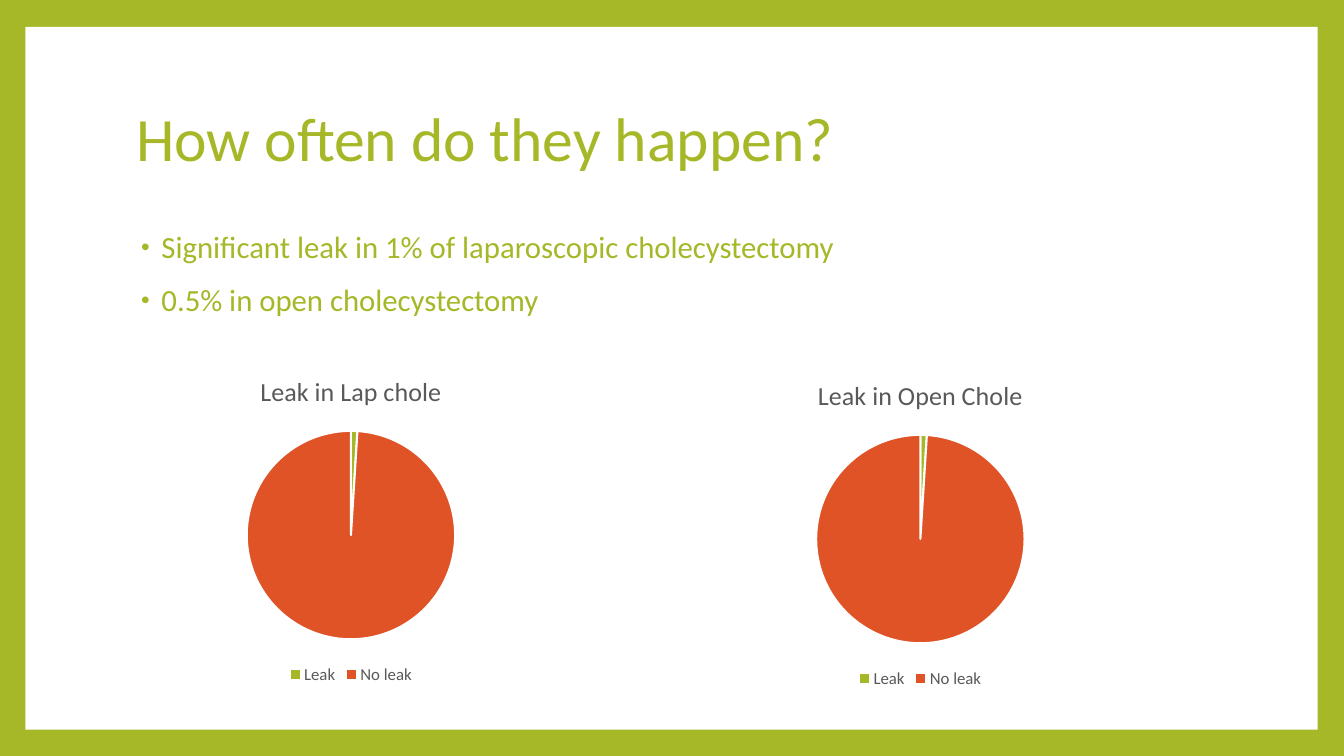
import pptx
import pptx.chart.data
import pptx.dml.color
import pptx.enum.chart
import pptx.enum.shapes
import pptx.enum.text
import pptx.util
from lxml import etree
from pptx.oxml.ns import qn

Cm = pptx.util.Cm
Pt = pptx.util.Pt
RGBColor = pptx.dml.color.RGBColor

GREEN = RGBColor(0xA6, 0xB7, 0x27)
ORANGE = RGBColor(0xDF, 0x53, 0x27)
GREY = RGBColor(0x59, 0x59, 0x59)
WHITE = RGBColor(0xFF, 0xFF, 0xFF)
FACE = "Calibri"


def set_font(font, size, color):
    """Set face, size and colour of a font."""
    font.name = FACE
    font.size = Pt(size)
    font.bold = False
    font.color.rgb = color


def add_panel(slide):
    """Draw the white panel inside the green frame."""
    panel = slide.shapes.add_shape(
        pptx.enum.shapes.MSO_SHAPE.RECTANGLE, Cm(0.64), Cm(0.68), Cm(32.57), Cm(17.71))
    panel.shadow.inherit = False
    panel.fill.solid()
    panel.fill.fore_color.rgb = WHITE
    panel.line.fill.background()


def add_bullet(para):
    """Give a paragraph a small green bullet and a hanging indent."""
    props = para._p.get_or_add_pPr()
    props.set("marL", str(Cm(0.64)))
    props.set("indent", str(-Cm(0.51)))
    color = etree.SubElement(props, qn("a:buClr"))
    etree.SubElement(color, qn("a:srgbClr"), val=str(GREEN))
    etree.SubElement(props, qn("a:buSzPct"), val="80000")
    etree.SubElement(props, qn("a:buFont"), typeface="Arial")
    etree.SubElement(props, qn("a:buChar"), char="•")


def add_text(slide, lines, top, height, size, anchor, space=0, bullet=False):
    """Add a text box with one paragraph a line."""
    box = slide.shapes.add_textbox(Cm(3.18), Cm(top), Cm(27.43), Cm(height))
    frame = box.text_frame
    frame.word_wrap = True
    frame.vertical_anchor = anchor
    frame.text = "\n".join(lines)
    for para in frame.paragraphs:
        para.line_spacing = 0.9
        para.space_before = Pt(space)
        if bullet:
            add_bullet(para)
        set_font(para.font, size, GREEN)


def add_pie(slide, title, left, top):
    """Add a pie chart of the leak rate."""
    data = pptx.chart.data.CategoryChartData()
    data.categories = ["Leak", "No leak"]
    data.add_series(title, [1, 99])
    chart = slide.shapes.add_chart(
        pptx.enum.chart.XL_CHART_TYPE.PIE, Cm(left), Cm(top), Cm(14.53), Cm(8.36), data).chart
    chart.font.name = FACE
    chart.font.size = Pt(10)
    chart.has_title = True
    chart.chart_title.include_in_layout = False
    chart.chart_title.text_frame.text = title
    set_font(chart.chart_title.text_frame.paragraphs[0].font, 18.6, GREY)
    chart.has_legend = True
    chart.legend.position = pptx.enum.chart.XL_LEGEND_POSITION.BOTTOM
    chart.legend.include_in_layout = False
    set_font(chart.legend.font, 12, GREY)
    for index, color in enumerate([GREEN, ORANGE]):
        style = chart.plots[0].series[0].points[index].format
        style.fill.solid()
        style.fill.fore_color.rgb = color
        style.line.color.rgb = WHITE
        style.line.width = Pt(1.5)


def main():
    """Build the slide and save it."""
    deck = pptx.Presentation()
    deck.slide_width = Cm(33.87)
    deck.slide_height = Cm(19.05)
    slide = deck.slides.add_slide(deck.slide_layouts[6])
    slide.background.fill.solid()
    slide.background.fill.fore_color.rgb = GREEN
    add_panel(slide)
    anchor = pptx.enum.text.MSO_ANCHOR
    add_text(slide, ["How often do they happen?"], 1.7, 3.76, 44, anchor.MIDDLE)
    facts = ["Significant leak in 1% of laparoscopic cholecystectomy",
             "0.5% in open cholecystectomy"]
    add_text(slide, facts, 5.72, 11.23, 22, anchor.TOP, 14, True)
    add_pie(slide, "Leak in Open Chole", 15.93, 9.09)
    add_pie(slide, "Leak in Lap chole", 1.58, 8.99)
    deck.save("out.pptx")


if __name__ == "__main__":
    main()
